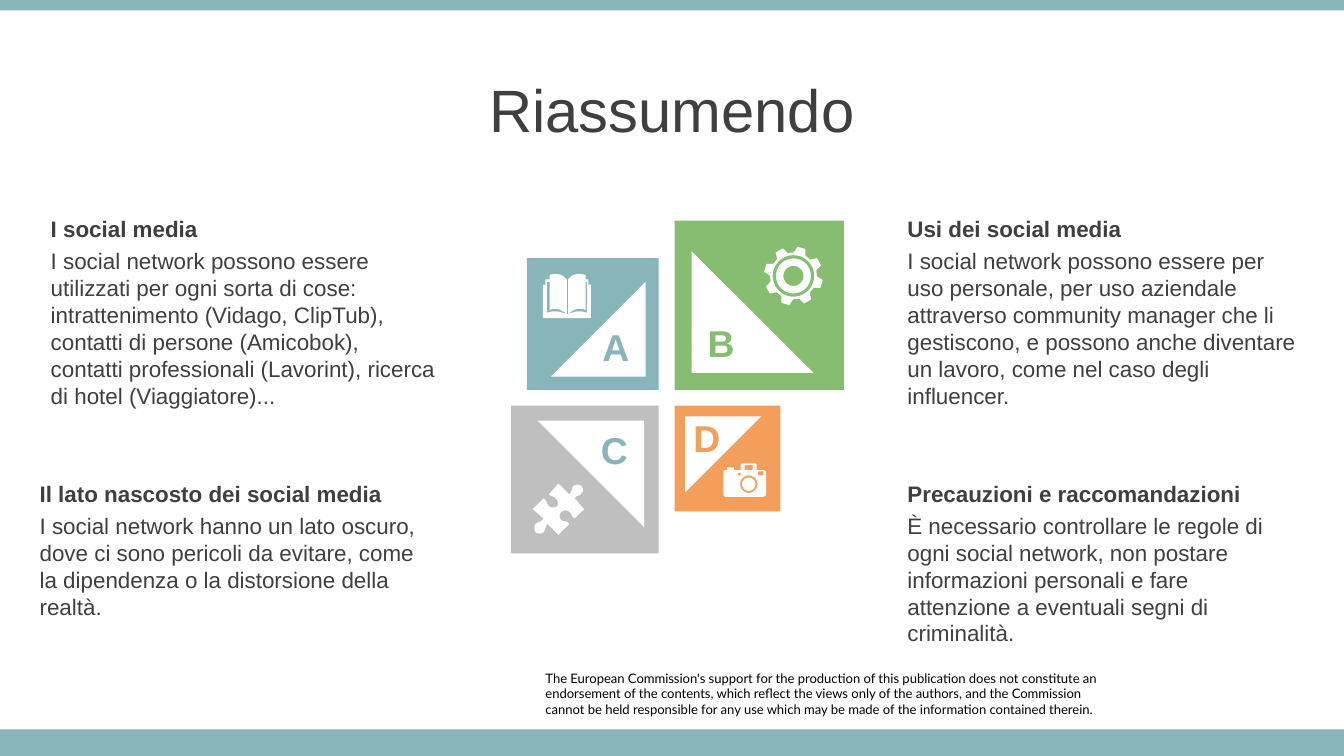
from dataclasses import dataclass
from math import cos, pi, radians, sin

from pptx import Presentation
from pptx.dml.color import RGBColor
from pptx.enum.shapes import MSO_SHAPE
from pptx.enum.text import MSO_ANCHOR, PP_ALIGN
from pptx.util import Cm, Pt


@dataclass(frozen=True)
class Theme:
    teal: str = "87B5BA"
    green: str = "86BD70"
    gray: str = "BFBFBF"
    orange: str = "F39E5A"
    white: str = "FFFFFF"
    dark: str = "3F3F3F"
    black: str = "000000"
    font: str = "Arial"
    note_font: str = "Lato"
    title: int = 32
    letter: int = 20
    body: int = 12
    note: int = 7


T = Theme()
W, H = 25.4, 14.29

# Icon outlines: two numbers are a corner, six are a Bézier curve.
BOOK = [(18, 30), (19, 30), (24, 28, 27, 27, 33, 29), (33, 6), (32, 6), (32, 27),
        (28, 25, 23, 26, 19, 30), (19, 4), (21, 1, 24, 0, 27, 0), (28, 0, 30, 0, 32, 1),
        (32, 4), (34, 4), (34, 8), (36, 8), (36, 33), (0, 33), (0, 8), (2, 8), (2, 4),
        (5, 4), (5, 1), (7, 0, 8, 0, 10, 0), (13, 0, 15, 1, 18, 4), (18, 30),
        (13, 26, 9, 25, 5, 27), (5, 6), (3, 6), (3, 29), (9, 27, 12, 28, 18, 30)]
PUZZLE = [(36, 2), (37, 3, 38, 6, 36, 7), (35, 10, 33, 8, 31, 11), (38, 19), (31, 26),
          (28, 24, 29, 22, 27, 21), (25, 19, 23, 20, 21, 21), (20, 22, 19, 25, 21, 27),
          (24, 29, 25, 27, 27, 30), (19, 38), (11, 30), (9, 32, 10, 33, 8, 36),
          (6, 38, 3, 37, 2, 36), (1, 34, 1, 32, 2, 30), (4, 28, 6, 29, 8, 26), (0, 19),
          (8, 11), (11, 13, 10, 15, 12, 17), (14, 18, 16, 18, 18, 17),
          (19, 16, 19, 13, 17, 11), (15, 9, 14, 10, 12, 8), (19, 0), (27, 8),
          (30, 5, 28, 4, 30, 2), (32, 0, 35, 1, 36, 2)]
CAMERA = [(14, 0), (24, 0), (25, 1), (25, 5), (29, 5), (31, 5, 32, 6, 32, 7), (32, 22),
          (32, 24, 31, 25, 29, 25), (2, 25), (1, 25, 0, 24, 0, 22), (0, 7),
          (0, 6, 1, 5, 2, 5), (3, 5), (3, 3), (8, 3), (8, 5), (13, 5), (13, 1)]


def circle(cx, cy, r, n=40):
    return [(cx + r * cos(2 * pi * i / n), cy + r * sin(2 * pi * i / n)) for i in range(n)]


def rectangle(x1, y1, x2, y2):
    return [(x1, y1), (x2, y1), (x2, y2), (x1, y2)]


def cogwheel(c, root, tip, teeth=8, first=-74):
    corners = ((-15, root), (-8, tip), (8, tip), (15, root))
    angles = [(radians(first + 360 / teeth * i + a), r)
              for i in range(teeth) for a, r in corners]
    return [(c + r * cos(a), c + r * sin(a)) for a, r in angles]


# Each icon: grid width and its contours; inner contours cut holes.
ICONS = {
    "book": (36, [BOOK]),
    "gear": (43, [cogwheel(21.5, 17.5, 22)] + [circle(21.5, 21.5, r) for r in (15.5, 13, 7.5)]),
    "puzzle": (38, [PUZZLE]),
    "camera": (32, [CAMERA, circle(19, 15.5, 6.5), circle(19, 15.5, 5),
                    rectangle(16, 1, 22, 5), rectangle(26, 6, 30, 9),
                    rectangle(11, 7, 13, 9)]),
}


def flatten(outline, steps=8):
    """Turn curves into short segments."""
    pts = []
    for seg in outline:
        if len(seg) == 2:
            pts.append(seg)
            continue
        p = [pts[-1], seg[:2], seg[2:4], seg[4:]]
        for i in range(1, steps + 1):
            t = i / steps
            k = ((1 - t) ** 3, 3 * t * (1 - t) ** 2, 3 * t * t * (1 - t), t ** 3)
            pts.append(tuple(sum(w * q[axis] for w, q in zip(k, p)) for axis in (0, 1)))
    return [(x * 100, y * 100) for x, y in pts]


def paint(sp, color):
    sp.shadow.inherit = False
    sp.fill.solid()
    sp.fill.fore_color.rgb = RGBColor.from_string(color)
    sp.line.fill.background()


def add_block(s, kind, x, y, w, h, color, rotation=0):
    sp = s.shapes.add_shape(kind, Cm(x), Cm(y), Cm(w), Cm(h))
    paint(sp, color)
    sp.rotation = rotation


def add_icon(s, name, x, y, w):
    grid, outlines = ICONS[name]
    contours = [flatten(o) for o in outlines]
    builder = s.shapes.build_freeform(*contours[0][0], scale=Cm(w) / (grid * 100))
    builder.add_line_segments(contours[0][1:])
    for contour in contours[1:]:
        builder.move_to(*contour[0])
        builder.add_line_segments(contour[1:])
    paint(builder.convert_to_shape(Cm(x), Cm(y)), T.white)


def write(sp, *lines, size=T.body, color=T.dark, font=T.font, bold=False,
          align=PP_ALIGN.LEFT, anchor=MSO_ANCHOR.TOP, inset=(0.25, 0.13)):
    tf = sp.text_frame
    tf.word_wrap = True
    tf.vertical_anchor = anchor
    tf.margin_left = tf.margin_right = Cm(inset[0])
    tf.margin_top = tf.margin_bottom = Cm(inset[1])
    for i, line in enumerate(lines):
        p = tf.add_paragraph() if i else tf.paragraphs[0]
        p.alignment = align
        r = p.add_run()
        r.text = line
        r.font.size, r.font.name, r.font.bold = Pt(size), font, bold
        r.font.color.rgb = RGBColor.from_string(color)


def add_text(s, x, y, w, h, *lines, **style):
    write(s.shapes.add_textbox(Cm(x), Cm(y), Cm(w), Cm(h)), *lines, **style)


def add_title(s, x, y, w, h, text):
    sp = s.shapes.title
    sp.left, sp.top, sp.width, sp.height = Cm(x), Cm(y), Cm(w), Cm(h)
    write(sp, text, size=T.title, align=PP_ALIGN.CENTER, anchor=MSO_ANCHOR.MIDDLE)


def add_tile(s, cx, cy, size, left, top, color, letter, ink, icon, nudge=0):
    """Square touching the cross at (cx, cy), its triangle's right angle facing the cross."""
    half_gap, share, near, box = 0.15, 0.72, 0.10, 1.12
    far = 1 - share - near
    x = cx - half_gap - size if left else cx + half_gap
    y = cy - half_gap - size if top else cy + half_gap
    side = size * share
    tx, ty = x + size * (far if left else near), y + size * (far if top else near)
    turn = {(True, True): 270, (False, True): 0, (True, False): 180, (False, False): 90}
    add_block(s, MSO_SHAPE.RECTANGLE, x, y, size, size, color)
    add_block(s, MSO_SHAPE.RIGHT_TRIANGLE, tx, ty, side, side, T.white, turn[left, top])
    add_text(s, tx + (side - box if left else 0) + nudge,
             ty + (side - box if top else 0) + nudge, box, box, letter,
             size=T.letter, color=ink, bold=True, align=PP_ALIGN.CENTER)
    name, dx, dy, w = icon
    add_icon(s, name, x + dx, y + dy, w)


def add_topic(s, x, y, w, h, heading, text):
    offset = 0.61
    add_text(s, x, y + offset, w, h - offset, text)
    add_text(s, x, y, w, 1.27, heading, bold=True)


def main():
    prs = Presentation()
    prs.slide_width, prs.slide_height = Cm(W), Cm(H)
    s = prs.slides.add_slide(prs.slide_layouts[5])

    add_text(s, 10.31, 12.67, 10.6, 0.89,
             "The European Commission's support for the production of this publication does not "
             "constitute an endorsement of the contents, which reflect the views only of the "
             "authors, and the Commission",
             "cannot be held responsible for any use which may be made of the information "
             "contained therein.",
             size=T.note, color=T.black, font=T.note_font, inset=(0, 0))
    for y, h in ((H - 0.5, 0.5), (0, 0.2)):
        add_block(s, MSO_SHAPE.RECTANGLE, 0, y, W, h, T.teal)
    add_title(s, 0, 1.25, W, 1.6, "Riassumendo")

    for tile in (
        (2.49, True, True, T.teal, "A", T.teal, ("book", 0.3, 0.3, 0.91)),
        (3.2, False, True, T.green, "B", T.green, ("gear", 1.7, 0.5, 1.09)),
        (2.79, True, False, T.gray, "C", T.teal, ("puzzle", 0.41, 1.47, 0.97)),
        (2, False, False, T.orange, "D", T.orange, ("camera", 0.92, 1.09, 0.81), -0.15),
    ):
        add_tile(s, 12.6, 7.52, *tile)

    upper, lower = 3.94, 8.94
    add_topic(s, 0.71, upper, 7.77, 4.45, "I social media",
              "I social network possono essere utilizzati per ogni sorta di cose: "
              "intrattenimento (Vidago, ClipTub), contatti di persone (Amicobok), contatti "
              "professionali (Lavorint), ricerca di hotel (Viaggiatore)...")
    add_topic(s, 0.5, lower, 7.98, 3.43, "Il lato nascosto dei social media",
              "I social network hanno un lato oscuro, dove ci sono pericoli da evitare, come "
              "la dipendenza o la distorsione della realtà.")
    add_topic(s, 16.9, upper, 8, 4.45, "Usi dei social media",
              "I social network possono essere per uso personale, per uso aziendale attraverso "
              "community manager che li gestiscono, e possono anche diventare un lavoro, come "
              "nel caso degli influencer.")
    add_topic(s, 16.9, lower, 7.6, 3.94, "Precauzioni e raccomandazioni",
              "È necessario controllare le regole di ogni social network, non postare "
              "informazioni personali e fare attenzione a eventuali segni di criminalità.")
    prs.save("out.pptx")


if __name__ == "__main__":
    main()
